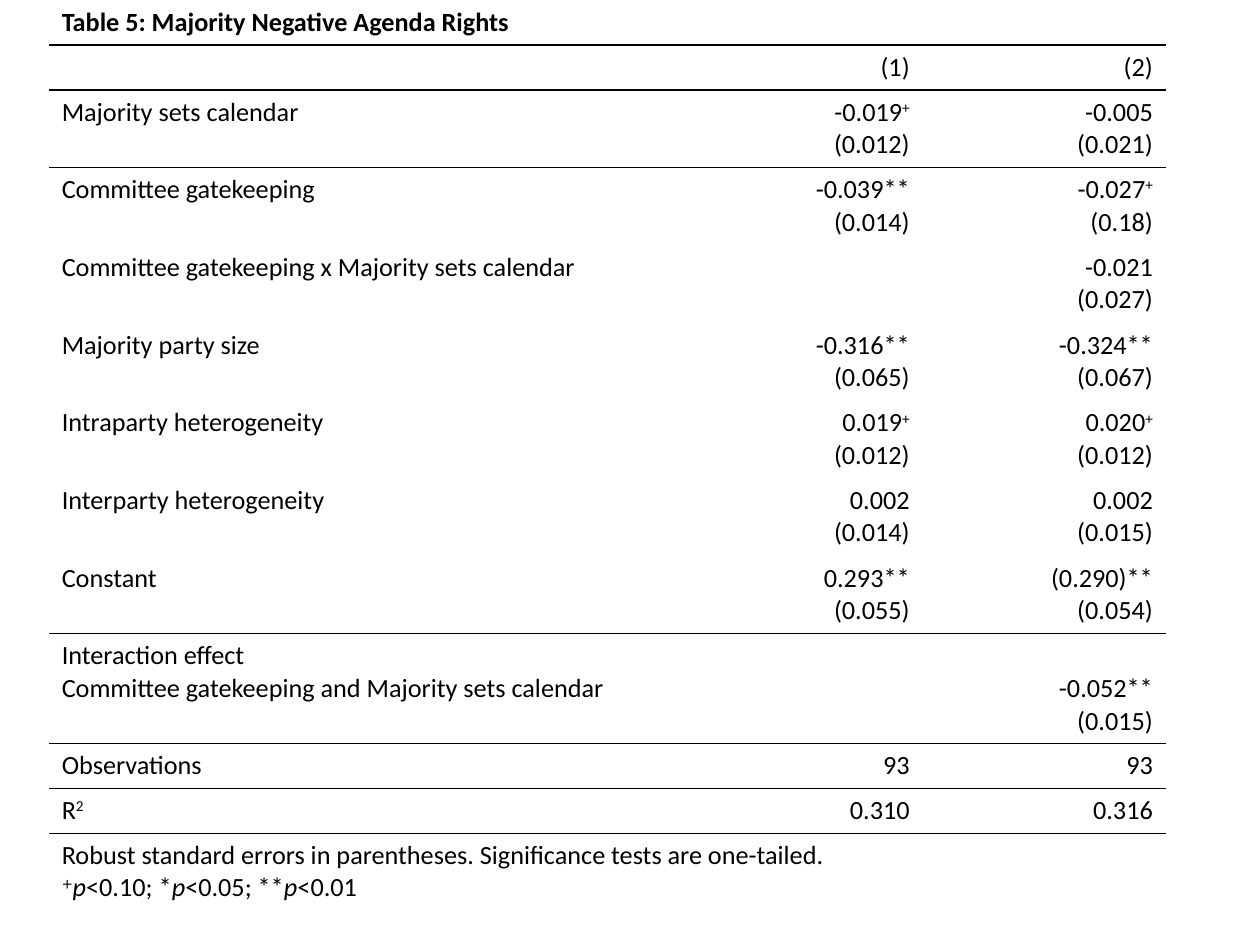
import pptx
import pptx.util
import pptx.dml.color
import pptx.enum.text
import pptx.oxml
import pptx.oxml.ns

ROWS = [
    ("Table 5: Majority Negative Agenda Rights",),
    ("", "(1)", "(2)"),
    ("Majority sets calendar", "-0.019|^+\n(0.012)", "-0.005\n(0.021)"),
    ("Committee gatekeeping", "-0.039**\n(0.014)", "-0.027|^+\n(0.18)"),
    ("Committee gatekeeping x Majority sets calendar", "", "-0.021\n(0.027)"),
    ("Majority party size", "-0.316**\n(0.065)", "-0.324**\n(0.067)"),
    ("Intraparty heterogeneity", "0.019|^+\n(0.012)", "0.020|^+\n(0.012)"),
    ("Interparty heterogeneity", "0.002\n(0.014)", "0.002\n(0.015)"),
    ("Constant", "0.293**\n(0.055)", "(0.290)**\n(0.054)"),
    ("Interaction effect\nCommittee gatekeeping and Majority sets calendar", "", "-0.052**\n(0.015)"),
    ("Observations", "93", "93"),
    ("R|^2", "0.310", "0.316"),
    ("Robust standard errors in parentheses. Significance tests are one-tailed.\n"
     "^+|_p|<0.10; *|_p|<0.05; **|_p|<0.01",),
]
TITLE, EFFECT, NOTE = 0, 9, 12
RULED = {0, 1, 8, 9, 11}
TALL = {EFFECT, NOTE}
COLS = (5.05, 1.88, 1.93)
HIGH = {1: 25.7, 2: 44.4, 3: 62.8}
LEFT = 0.39
THEME = {"font": "Calibri", "sup": "TeX Gyre Adventor", "size": 15,
         "ink": "000000", "fill": "FFFFFF", "line": 1}
PLAIN = "{2D5ABB26-0587-4C30-8999-92F81FD0307C}"

Inches, Pt = pptx.util.Inches, pptx.util.Pt
RGB = pptx.dml.color.RGBColor.from_string
ALIGN = pptx.enum.text.PP_ALIGN
ANCHOR = pptx.enum.text.MSO_ANCHOR


def write(cell, text, align=ALIGN.LEFT, bold=False, sup=THEME["font"], anchor=ANCHOR.TOP):
    cell.vertical_anchor = anchor
    frame = cell.text_frame
    for i, line in enumerate(text.split("\n")):
        para = frame.add_paragraph() if i else frame.paragraphs[0]
        para.alignment = align
        end = para._p.get_or_add_endParaRPr()
        end.set("sz", str(THEME["size"] * 100))
        for bit in filter(None, line.split("|")):
            run = para.add_run()
            run.text = bit.lstrip("^_")
            font = run.font
            font.name = sup if bit[0] == "^" else THEME["font"]
            font.size = Pt(THEME["size"])
            font.color.rgb = RGB(THEME["ink"])
            font.bold = bold
            font.italic = bit[0] == "_"
            if bit[0] == "^":
                font._element.set("baseline", "30000")


def rule(cell, sides):
    props = cell._tc.get_or_add_tcPr()
    for i, side in enumerate(sides):
        props.insert(i, pptx.oxml.parse_xml(
            f'<a:ln{side} {pptx.oxml.ns.nsdecls("a")} w="{Pt(THEME["line"])}"><a:solidFill>'
            f'<a:srgbClr val="{THEME["ink"]}"/></a:solidFill></a:ln{side}>'))


def main():
    deck = pptx.Presentation()
    deck.slide_width, deck.slide_height = Inches(10), Inches(7.5)
    slide = deck.slides.add_slide(deck.slide_layouts[6])
    table = slide.shapes.add_table(len(ROWS), len(COLS), Inches(LEFT), 0,
                                   Inches(sum(COLS)), deck.slide_height).table
    table.first_row = table.horz_banding = False
    table._tbl.tblPr.find(pptx.oxml.ns.qn("a:tableStyleId")).text = PLAIN
    for col, width in zip(table.columns, COLS):
        col.width = Inches(width)

    for r, row in enumerate(ROWS):
        lines = 3 if r in TALL else max(text.count("\n") + 1 for text in row)
        table.rows[r].height = Pt(HIGH[lines])
        sides = "T" * (r - 1 in RULED) + "B" * (r in RULED)
        for c in range(len(COLS)):
            cell = table.cell(r, c)
            cell.fill.solid()
            cell.fill.fore_color.rgb = RGB(THEME["fill"])
            rule(cell, sides)
            write(cell, row[c] if c < len(row) else "",
                  align=ALIGN.RIGHT if c else ALIGN.LEFT, bold=r == TITLE,
                  sup=THEME["sup"] if r == NOTE else THEME["font"],
                  anchor=ANCHOR.BOTTOM if r == EFFECT and c else ANCHOR.TOP)
        if len(row) == 1:
            table.cell(r, 0).merge(table.cell(r, len(COLS) - 1))
    deck.save("out.pptx")


if __name__ == "__main__":
    main()
